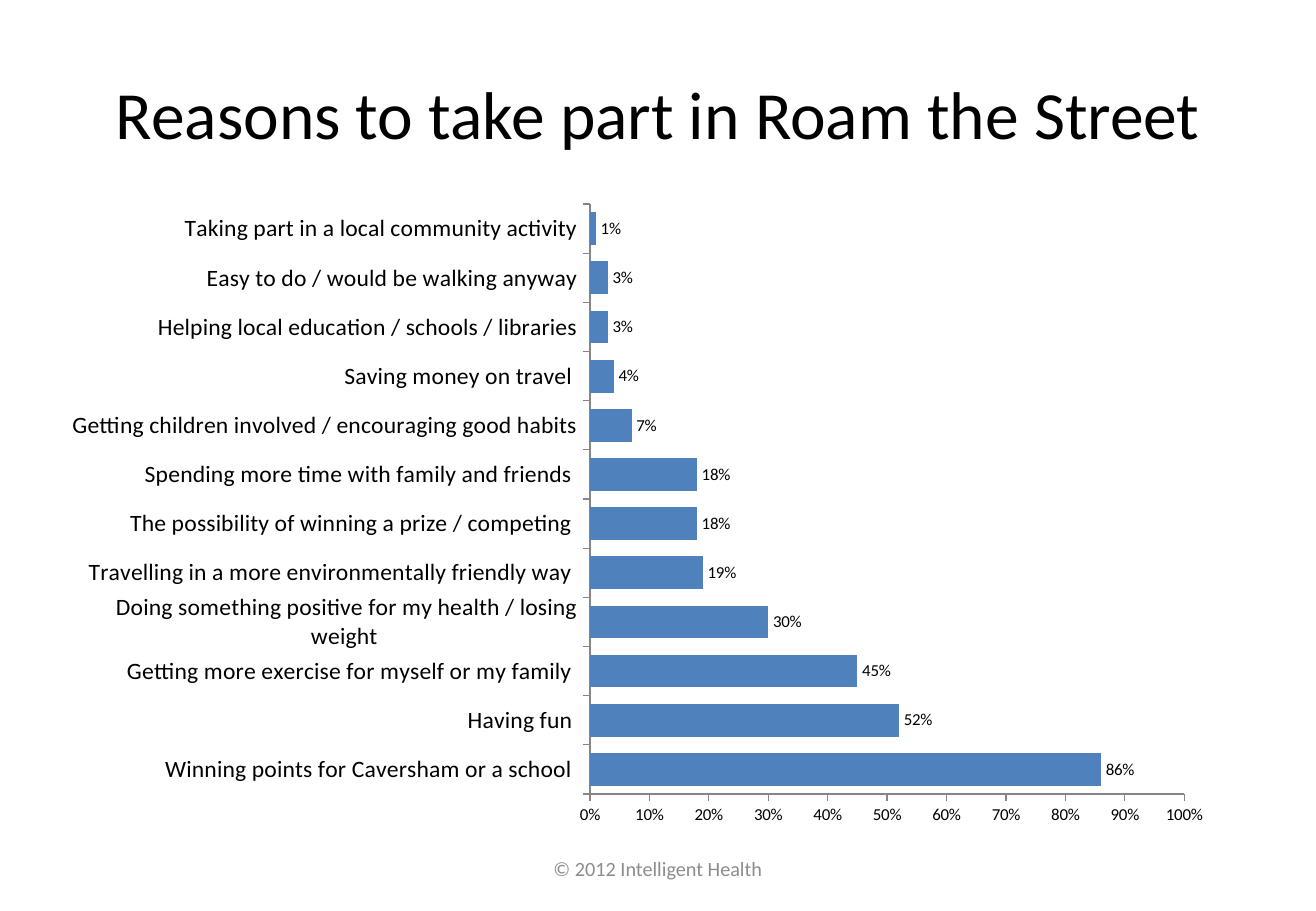
import pptx
import pptx.chart.data
import pptx.dml.color
import pptx.enum.chart
import pptx.enum.text
import pptx.oxml
import pptx.oxml.ns
import pptx.util
from dataclasses import dataclass

Inches = pptx.util.Inches
Pt = pptx.util.Pt


@dataclass(frozen=True)
class Theme:
    font: str = "Calibri"
    ink: str = "000000"
    muted: str = "8C8C8C"
    bar: str = "4F81BD"
    axis: str = "868686"
    title: int = 40
    label: int = 14
    foot: int = 12
    small: int = 10


REASONS = [
    ("Winning points for Caversham or a school ", 0.86),
    ("Having fun ", 0.52),
    ("Getting more exercise for myself or my family ", 0.45),
    ("Doing something positive for my health / losing weight ", 0.3),
    ("Travelling in a more environmentally friendly way ", 0.19),
    ("The possibility of winning a prize / competing ", 0.18),
    ("Spending more time with family and friends ", 0.18),
    ("Getting children involved / encouraging good habits", 0.07),
    ("Saving money on travel ", 0.04),
    ("Helping local education / schools / libraries", 0.03),
    ("Easy to do / would be walking anyway", 0.03),
    ("Taking part in a local community activity", 0.01),
]


class Deck:
    def __init__(self, theme, width, height):
        self.theme = theme
        self.file = pptx.Presentation()
        self.file.slide_width = Inches(width)
        self.file.slide_height = Inches(height)
        self.slide = self.file.slides.add_slide(self.file.slide_layouts[6])

    def style(self, font, size, color):
        font.name = self.theme.font
        font.size = Pt(size)
        font.color.rgb = pptx.dml.color.RGBColor.from_string(color)

    def text(self, words, box, size, color):
        frame = self.slide.shapes.add_textbox(*map(Inches, box)).text_frame
        frame.word_wrap = True
        frame.vertical_anchor = pptx.enum.text.MSO_ANCHOR.MIDDLE
        frame.text = words
        line = frame.paragraphs[0]
        line.alignment = pptx.enum.text.PP_ALIGN.CENTER
        self.style(line.runs[0].font, size, color)

    def bars(self, name, pairs, box, plot_box):
        theme = self.theme
        data = pptx.chart.data.CategoryChartData(number_format="0%")
        data.categories = [reason for reason, share in pairs]
        data.add_series(name, [share for reason, share in pairs])
        kind = pptx.enum.chart.XL_CHART_TYPE.BAR_CLUSTERED
        chart = self.slide.shapes.add_chart(kind, *map(Inches, box), data).chart
        chart.has_legend = False
        chart.has_title = False
        self.style(chart.font, theme.small, theme.ink)

        plot = chart.plots[0]
        plot.gap_width = 50
        plot.vary_by_categories = False
        fill = plot.series[0].format.fill
        fill.solid()
        fill.fore_color.rgb = pptx.dml.color.RGBColor.from_string(theme.bar)
        plot.has_data_labels = True
        labels = plot.data_labels
        labels.show_value = True
        labels.number_format = "0%"
        labels.number_format_is_linked = False
        labels.position = pptx.enum.chart.XL_LABEL_POSITION.OUTSIDE_END
        self.style(labels.font, theme.small, theme.ink)

        self.axis(chart.category_axis, theme.label)
        shares = chart.value_axis
        self.axis(shares, theme.small)
        shares.minimum_scale, shares.maximum_scale = 0, 1
        shares.major_unit = 0.1
        shares.tick_labels.number_format = "0%"
        shares.tick_labels.number_format_is_linked = False
        self.place(chart, plot_box)

    def axis(self, axis, size):
        axis.has_major_gridlines = False
        axis.major_tick_mark = pptx.enum.chart.XL_TICK_MARK.OUTSIDE
        axis.format.line.width = Pt(0.75)
        axis.format.line.color.rgb = pptx.dml.color.RGBColor.from_string(self.theme.axis)
        self.style(axis.tick_labels.font, size, self.theme.ink)

    def place(self, chart, box):
        tags = [("layoutTarget", "inner"), ("xMode", "edge"), ("yMode", "edge")]
        tags += zip("xywh", box)
        parts = "".join(f'<c:{tag} val="{value}"/>' for tag, value in tags)
        space = pptx.oxml.ns.nsdecls("c")
        layout = pptx.oxml.parse_xml(
            f"<c:layout {space}><c:manualLayout>{parts}</c:manualLayout></c:layout>"
        )
        area = chart.element.find(".//" + pptx.oxml.ns.qn("c:plotArea"))
        old = area.find(pptx.oxml.ns.qn("c:layout"))
        if old is not None:
            area.remove(old)
        area.insert(0, layout)


def main():
    theme = Theme()
    deck = Deck(theme, 10.83, 7.5)
    deck.text("Reasons to take part in Roam the Street",
              (0.54, 0.3, 9.75, 1.25), theme.title, theme.ink)
    deck.text("© 2012 Intelligent Health",
              (3.7, 6.95, 3.43, 0.4), theme.foot, theme.muted)
    deck.bars("Series 1", REASONS, (0.54, 1.47, 9.59, 5.32),
              (0.45, 0.04, 0.51, 0.92))
    deck.file.save("out.pptx")


if __name__ == "__main__":
    main()
